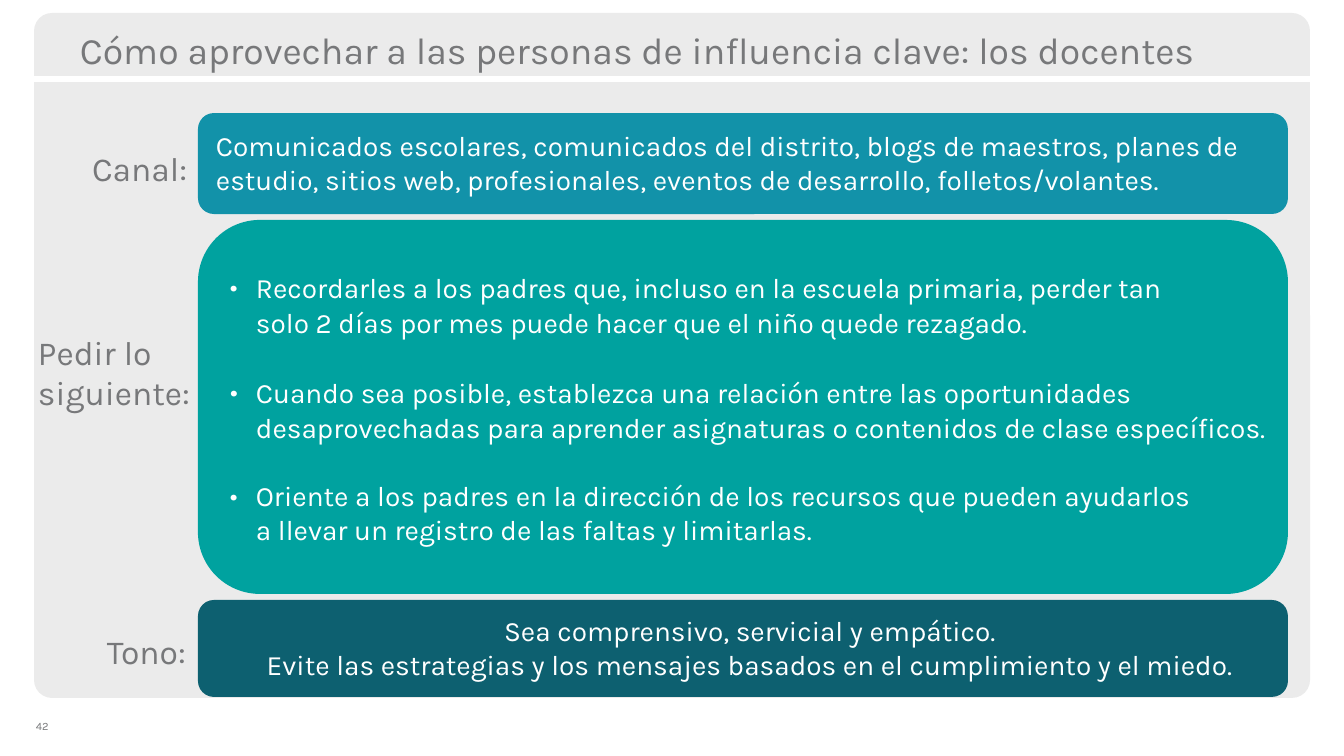
from pptx import Presentation
from pptx.dml.color import RGBColor
from pptx.enum.shapes import MSO_CONNECTOR, MSO_SHAPE
from pptx.enum.text import PP_ALIGN
from pptx.util import Pt
from lxml.etree import SubElement
from pptx.oxml.ns import qn

SCALE = 914400 / 134.4
THEME = {
    "font": "Karla",
    "panel": "EBEBEB", "white": "FFFFFF", "grey": "77787A",
    "blue": "1292A9", "teal": "00A29F", "navy": "0D6070",
    "title": 20, "label": 18, "body": 15, "page": 6, "rule": 3.25,
}


def px(n):
    return round(n * SCALE)


def color(key):
    return RGBColor.from_string(THEME[key])


def add_card(x, y, w, h, radius, fill):
    card = slide.shapes.add_shape(
        MSO_SHAPE.ROUNDED_RECTANGLE, px(x), px(y), px(w), px(h))
    card.adjustments[0] = radius / min(w, h)
    card.shadow.inherit = False
    card.fill.solid()
    card.fill.fore_color.rgb = color(fill)
    card.line.fill.background()


def add_text(x, y, w, h, paras, size, ink, top=0, left=0, hang=0,
             align=PP_ALIGN.LEFT, space=None):
    """Add a text box; each paragraph is a list of lines, bulleted if hang is set."""
    box = slide.shapes.add_textbox(px(x), px(y), px(w), px(h))
    frame = box.text_frame
    frame.word_wrap = True
    frame.margin_left = frame.margin_right = frame.margin_bottom = 0
    frame.margin_top = px(top)
    for i, lines in enumerate(paras):
        para = frame.paragraphs[0] if i == 0 else frame.add_paragraph()
        para.alignment = align
        if space:
            para.line_spacing = space
        props = para._p.get_or_add_pPr()
        props.set("marL", str(px(left)))
        props.set("indent", str(-px(hang)))
        if hang:
            SubElement(props, qn("a:buFont")).set("typeface", THEME["font"])
            SubElement(props, qn("a:buChar")).set("char", "•")
        for j, line in enumerate(lines):
            if j:
                para.add_line_break()
            run = para.add_run()
            run.text = line
            run.font.name = THEME["font"]
            run.font.size = Pt(THEME[size])
            run.font.color.rgb = color(ink)


deck = Presentation()
deck.slide_width, deck.slide_height = px(1344), px(756)
slide = deck.slides.add_slide(deck.slide_layouts[6])

# Panel and title
add_card(34, 13, 1276, 685, 18, "panel")
rule = slide.shapes.add_connector(
    MSO_CONNECTOR.STRAIGHT, 0, px(79), px(1344), px(79))
rule.line.color.rgb = color("white")
rule.line.width = Pt(THEME["rule"])
SubElement(rule._element.spPr, qn("a:effectLst"))
add_text(56, 20, 1231, 52,
         [["Cómo aprovechar a las personas de influencia clave: los docentes"]],
         "title", "grey", top=7, left=24)
add_text(35, 719, 18, 13, [["42"]], "page", "grey", left=1)

# Cards
for y, h, radius, fill in [
    (113, 101, 16, "blue"), (220, 374, 62, "teal"), (600, 97, 16, "navy"),
]:
    add_card(198, y, 1090, h, radius, fill)

# Row labels
for x, y, w, h, label in [
    (91, 148, 106, 42, "Canal:"),
    (37, 332, 162, 82, "Pedir lo siguiente:"),
    (106, 631, 90, 42, "Tono:"),
]:
    add_text(x, y, w, h, [[label]], "label", "grey", left=1)

# Card text
add_text(215, 129, 1032, 67,
         [["Comunicados escolares, comunicados del distrito, blogs de maestros, "
           "planes de estudio, sitios web, profesionales, eventos de desarrollo, "
           "folletos/volantes."]],
         "body", "white", left=1)

asks = [
    (988, 1.05, ["Recordarles a los padres que, incluso en la escuela primaria, "
                 "perder tan solo 2 días por mes puede hacer que el niño quede "
                 "rezagado."]),
    (1042, 1.05, ["Cuando sea posible, establezca una relación entre las "
                  "oportunidades desaprovechadas para aprender asignaturas o "
                  "contenidos de clase específicos."]),
    (1019, None, ["Oriente a los padres en la dirección de los recursos que "
                  "pueden ayudarlos",
                  "a llevar un registro de las faltas y limitarlas."]),
]
for i, (w, space, lines) in enumerate(asks):
    add_text(229, 269 + 105 * i, w, 69, [lines], "body", "white",
             left=27, hang=26, space=space)

add_text(229, 614, 1042, 67,
         [["Sea comprensivo, servicial y empático."],
          ["Evite las estrategias y los mensajes basados en el cumplimiento "
           "y el miedo."]],
         "body", "white", align=PP_ALIGN.CENTER)

deck.save("out.pptx")
